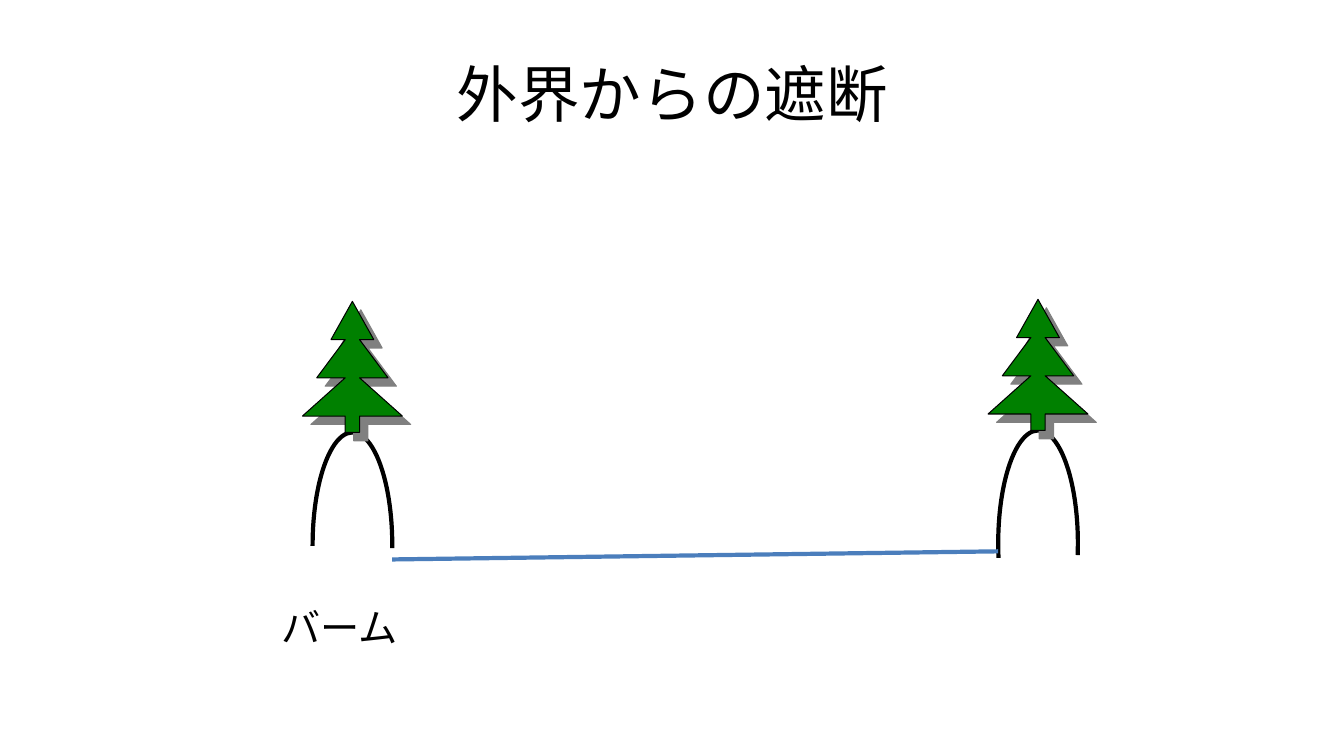
from lxml.etree import SubElement
from pptx import Presentation
from pptx.dml.color import RGBColor
from pptx.enum.shapes import MSO_CONNECTOR, MSO_SHAPE
from pptx.enum.text import MSO_ANCHOR, PP_ALIGN
from pptx.oxml.ns import qn
from pptx.util import Inches, Pt

TREE_W, TREE_H = 0.99, 1.3
BERM_W, BERM_H = 0.79, 2.24
COLS, ROWS = 14, 24
HALF = [(0, 0), (3, 7), (1, 7), (5, 14), (1, 14), (7, 21), (1, 21), (1, 24)]


def color(text):
    return RGBColor.from_string(text)


def outline(shape, tint, width):
    shape.line.color.rgb = color(tint)
    shape.line.width = Pt(width)


def write(shape, text, font, size, align):
    frame = shape.text_frame
    frame.word_wrap = True
    para = frame.paragraphs[0]
    para.text = text
    para.alignment = align
    para.font.name = font
    para.font.size = Pt(size)
    para.font.color.rgb = color("000000")


def shade(shape):
    shape.shadow.inherit = False
    effects = shape._element.spPr.find(qn("a:effectLst"))
    drop = SubElement(effects, qn("a:outerShdw"), dist=str(Pt(8.5)),
                      dir="2700000", algn="ctr", rotWithShape="0")
    SubElement(drop, qn("a:srgbClr"), val="808080")


def add_title(slide, left, top, width, height):
    title = slide.shapes.title
    title.left, title.top = Inches(left), Inches(top)
    title.width, title.height = Inches(width), Inches(height)
    title.text_frame.vertical_anchor = MSO_ANCHOR.MIDDLE
    write(title, "外界からの遮断", "Calibri", 44, PP_ALIGN.CENTER)


def add_berm(slide, left, top, start, end):
    berm = slide.shapes.add_shape(MSO_SHAPE.ARC, Inches(left), Inches(top),
                                  Inches(BERM_W), Inches(BERM_H))
    berm.rotation = 180
    berm.adjustments[0] = start
    berm.adjustments[1] = end
    berm.shadow.inherit = False
    berm.fill.background()
    outline(berm, "000000", 3)


def add_tree(slide, left, top):
    mid = COLS / 2
    right = [(mid + x, y) for x, y in HALF]
    mirror = [(mid - x, y) for x, y in reversed(HALF[1:])]
    scale = Inches(TREE_W) / COLS, Inches(TREE_H) / ROWS
    path = slide.shapes.build_freeform(*right[0], scale=scale)
    path.add_line_segments(right[1:] + mirror, close=True)
    tree = path.convert_to_shape(Inches(left), Inches(top))
    tree.fill.solid()
    tree.fill.fore_color.rgb = color("008000")
    outline(tree, "000000", 0.75)
    shade(tree)


def add_bank(slide, left, top, start, end):
    add_berm(slide, left + (TREE_W - BERM_W) / 2, top + TREE_H, start, end)
    add_tree(slide, left, top)


def add_ground(slide, left, top, right, low):
    ground = slide.shapes.add_connector(
        MSO_CONNECTOR.STRAIGHT, Inches(left), Inches(top),
        Inches(right), Inches(low))
    outline(ground, "4B7EBC", 3)
    SubElement(ground._element.spPr, qn("a:effectLst"))


def add_label(slide, left, top, width, height):
    label = slide.shapes.add_textbox(Inches(left), Inches(top),
                                     Inches(width), Inches(height))
    write(label, "バーム", "Arial", 28, PP_ALIGN.LEFT)


def main():
    deck = Presentation()
    deck.slide_width, deck.slide_height = Inches(13.33), Inches(7.5)
    slide = deck.slides.add_slide(deck.slide_layouts[5])
    add_title(slide, 0.67, 0.3, 12, 1.25)
    add_bank(slide, 3, 2.99, 215.49, 110.48)
    add_bank(slide, 9.8, 2.97, 203.88, 117.87)
    add_ground(slide, 3.89, 5.55, 9.9, 5.47)
    add_label(slide, 2.69, 5.94, 2.6, 0.57)
    deck.save("out.pptx")


if __name__ == "__main__":
    main()
